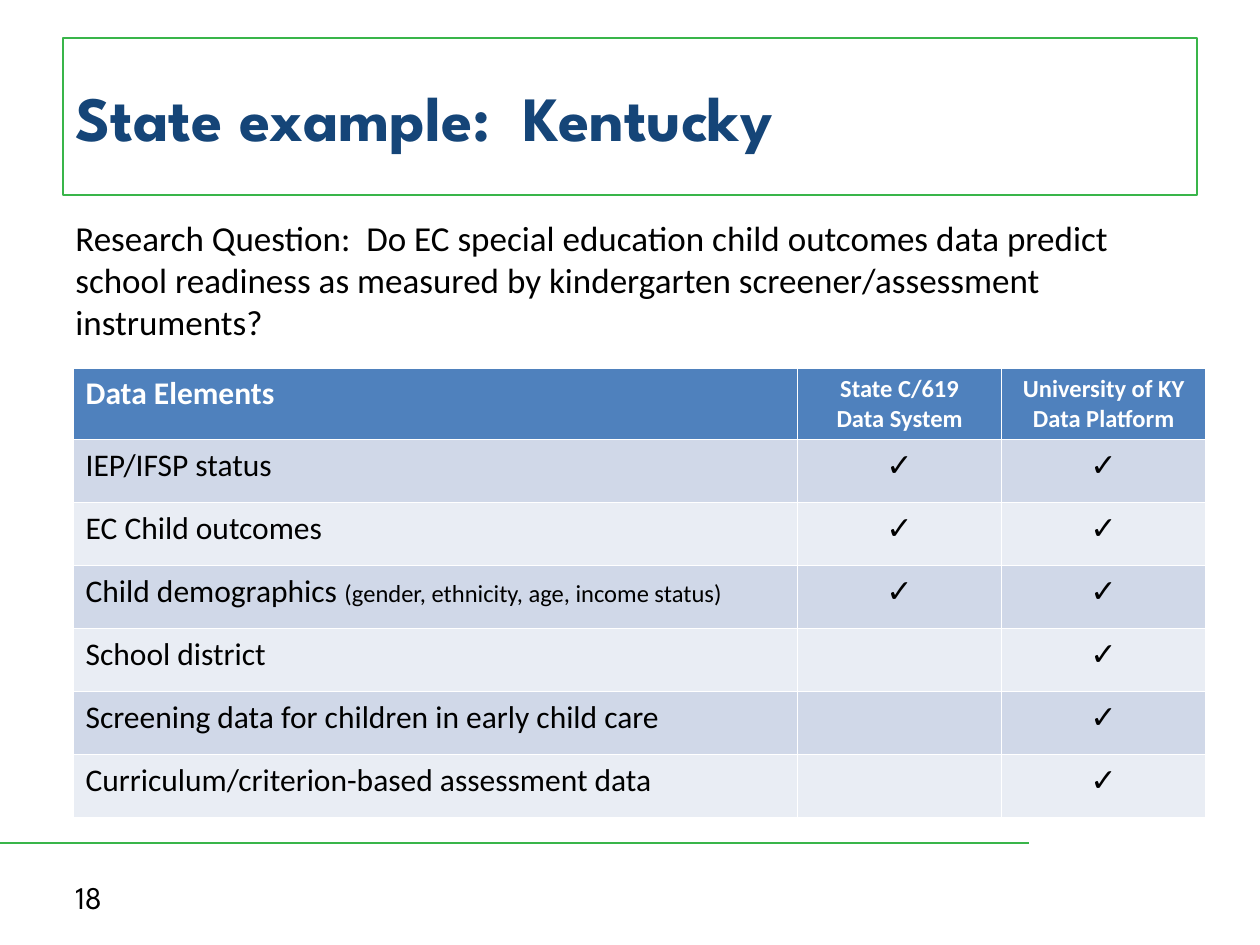
from lxml.etree import SubElement
from pptx import Presentation
from pptx.dml.color import RGBColor
from pptx.enum.shapes import MSO_CONNECTOR, MSO_SHAPE
from pptx.enum.text import MSO_ANCHOR, PP_ALIGN
from pptx.oxml.ns import qn
from pptx.util import Inches, Pt

BLACK = RGBColor(0x00, 0x00, 0x00)
WHITE = RGBColor(0xFF, 0xFF, 0xFF)
NAVY = RGBColor(0x15, 0x45, 0x78)
GREEN = RGBColor(0x39, 0xB5, 0x4A)
BLUE = RGBColor(0x4F, 0x81, 0xBD)
BANDS = [RGBColor(0xE9, 0xED, 0xF4), RGBColor(0xD0, 0xD8, 0xE8)]
HEAD, BODY = "League Spartan", "Calibri"
MARGIN, WIDTH = Inches(0.5), Inches(9)


def write(tf, text, size, color, font=BODY, bold=False, align=PP_ALIGN.LEFT):
    """Fill the first paragraph; a "|" in the text starts a smaller run."""
    p = tf.paragraphs[0]
    main, _, small = text.partition("|")
    p.text = main
    if small:
        p.add_run().text = small
    p.alignment = align
    for r, points in zip(p.runs, (size, 14)):
        r.font.size, r.font.name, r.font.bold = Pt(points), font, bold
        r.font.color.rgb = color


def add_borders(cell):
    tcPr = cell._tc.get_or_add_tcPr()
    for side in ("lnL", "lnR", "lnT", "lnB"):
        ln = SubElement(tcPr, qn("a:" + side), w=str(Pt(1)))
        fill = SubElement(ln, qn("a:solidFill"))
        SubElement(fill, qn("a:srgbClr"), val=str(WHITE))


prs = Presentation()
prs.slide_width, prs.slide_height = Inches(10), Inches(7.5)
s = prs.slides.add_slide(prs.slide_layouts[6])

# Footer rule and slide number
rule = s.shapes.add_connector(MSO_CONNECTOR.STRAIGHT, 0, Inches(6.69),
                              Inches(8.17), Inches(6.69))
rule.line.color.rgb, rule.line.width = GREEN, Pt(1.5)
SubElement(rule._element.spPr, qn("a:effectLst"))

number = s.shapes.add_textbox(MARGIN, Inches(6.92), Inches(2.33), Inches(0.4))
number.text_frame.word_wrap = True
number.text_frame.vertical_anchor = MSO_ANCHOR.MIDDLE
write(number.text_frame, "18", 18, BLACK, HEAD)

# Title
title = s.shapes.add_shape(MSO_SHAPE.RECTANGLE, MARGIN, Inches(0.3),
                           WIDTH, Inches(1.25))
title.shadow.inherit = False
title.fill.background()
title.line.color.rgb, title.line.width = GREEN, Pt(1)
title.text_frame.vertical_anchor = MSO_ANCHOR.MIDDLE
write(title.text_frame, "State example:  Kentucky", 36, NAVY, HEAD, bold=True)

# Data elements held by each system
rows = [
    ("Data Elements", "State C/619\vData System", "University of KY\vData Platform"),
    ("IEP/IFSP status", "✓", "✓"),
    ("EC Child outcomes", "✓", "✓"),
    ("Child demographics |(gender, ethnicity, age, income status)", "✓", "✓"),
    ("School district", "", "✓"),
    ("Screening data for children in early child care", "", "✓"),
    ("Curriculum/criterion-based assessment data", "", "✓"),
]
table = s.shapes.add_table(len(rows), 3, Inches(0.58), Inches(2.92),
                           WIDTH, Inches(3.57)).table
for column, width in zip(table.columns, (5.75, 1.62, 1.62)):
    column.width = Inches(width)
for i, texts in enumerate(rows):
    header = i == 0
    table.rows[i].height = Inches(0.57 if header else 0.5)
    for j, text in enumerate(texts):
        cell = table.cell(i, j)
        add_borders(cell)
        cell.fill.solid()
        cell.fill.fore_color.rgb = BLUE if header else BANDS[i % 2]
        write(cell.text_frame, text, 14 if header and j else 18,
              WHITE if header else BLACK, bold=header,
              align=PP_ALIGN.CENTER if j else PP_ALIGN.LEFT)

# Research question
question = s.shapes.add_textbox(MARGIN, Inches(1.67), WIDTH, Inches(1.11))
question.text_frame.word_wrap = True
write(question.text_frame,
      "Research Question:  Do EC special education child outcomes data predict "
      "school readiness as measured by kindergarten screener/assessment "
      "instruments?", 20, BLACK)

prs.save("out.pptx")
